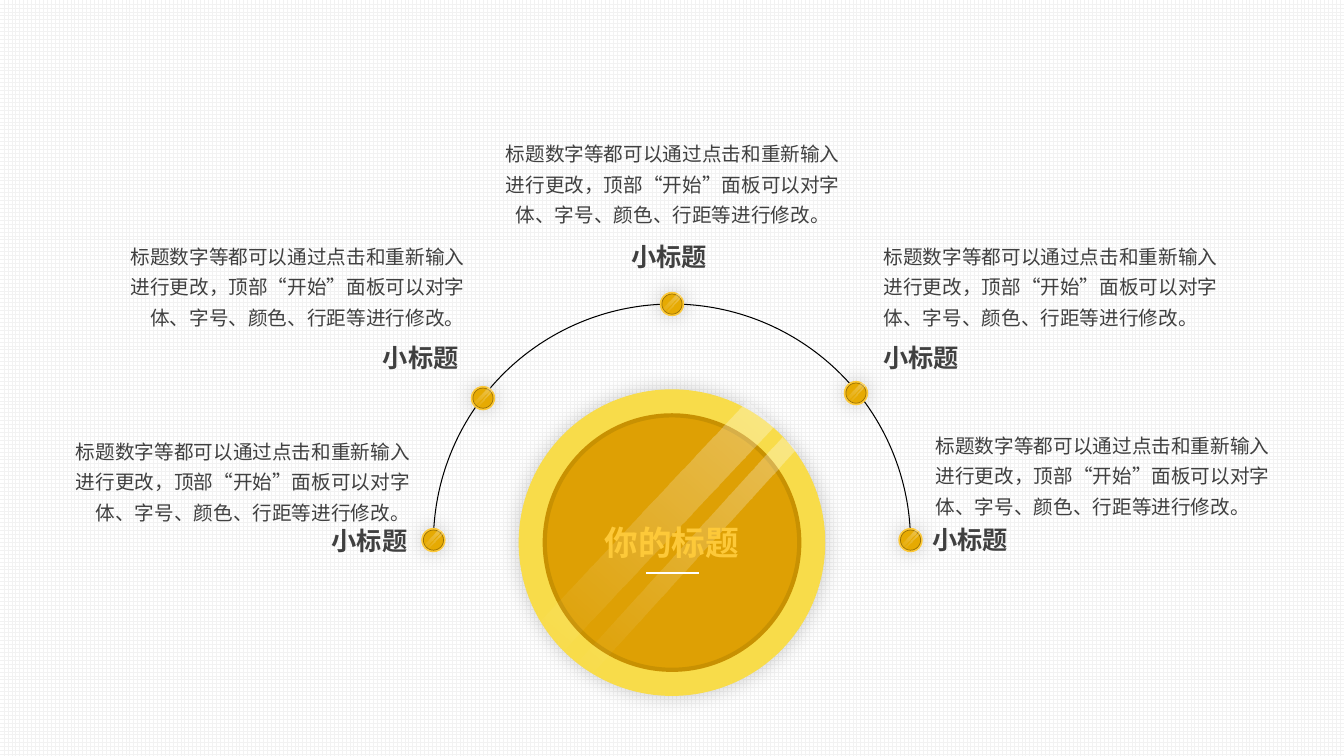
import pptx
import pptx.util
import pptx.dml.color
import pptx.enum.dml
import pptx.enum.shapes
import pptx.enum.text
import pptx.oxml
import pptx.oxml.ns

SHAPE = pptx.enum.shapes.MSO_SHAPE
ALIGN = pptx.enum.text.PP_ALIGN
ANCHOR = pptx.enum.text.MSO_ANCHOR
NS = pptx.oxml.ns.nsdecls("a")

prs = pptx.Presentation()
prs.slide_width = pptx.util.Inches(13.33)
prs.slide_height = pptx.util.Inches(7.5)
col = prs.slide_width / 16
row = prs.slide_height / 9
s = prs.slides.add_slide(prs.slide_layouts[5])


def rgb(value):
    return pptx.dml.color.RGBColor.from_string(value)


def coin(cx, cy, d, rim_color, face_color, edge_color, edge_width):
    g = s.shapes.add_group_shape()
    discs = []
    for size, color in ((d, rim_color), (d * 0.83, face_color)):
        sp = g.shapes.add_shape(SHAPE.OVAL, int((cx - size / 2) * col), int((cy - size / 2) * row),
                                int(size * col), int(size * row))
        sp.shadow.inherit = False
        sp.fill.solid()
        sp.fill.fore_color.rgb = rgb(color)
        sp.line.fill.background()
        discs.append(sp)
    rim, face = discs
    face.line.color.rgb = rgb(edge_color)
    face.line.width = pptx.util.Pt(edge_width)
    effects = rim._element.spPr.find(pptx.oxml.ns.qn("a:effectLst"))
    effects.append(pptx.oxml.parse_xml(
        f'<a:outerShdw {NS} blurRad="{pptx.util.Pt(15)}" dist="0" dir="0" algn="ctr" rotWithShape="0">'
        '<a:srgbClr val="000000"><a:alpha val="20000"/></a:srgbClr></a:outerShdw>'))
    for dx, dy, w, h in ((0.04, 0.05, 0.08, 1.01), (-0.06, -0.05, 0.16, 1.02)):
        sp = g.shapes.add_shape(SHAPE.PARALLELOGRAM, int((cx + (dx - w / 2) * d) * col),
                                int((cy + (dy - h / 2) * d) * row), int(w * d * col), int(h * d * row))
        sp.adjustments[0] = 0.25
        sp.rotation = 41
        sp.shadow.inherit = False
        sp.line.fill.background()
        sp.fill.gradient()
        sp.fill.gradient_angle = 90
        for stop, position, alpha in zip(sp.fill.gradient_stops, (0, 1), (0, 33000)):
            stop.position = position
            stop.color.rgb = rgb("FFFFFF")
            clr = stop._gs.find(pptx.oxml.ns.qn("a:srgbClr"))
            clr.append(pptx.oxml.parse_xml(f'<a:alpha {NS} val="{alpha}"/>'))


bg = s.background.fill
bg.patterned()
bg.pattern = pptx.enum.dml.MSO_PATTERN.LARGE_GRID
bg.fore_color.rgb = rgb("F2F2F2")
bg.back_color.rgb = rgb("FFFFFF")

coin(8, 6.46, 3.65, "F8DC4A", "DEA004", "C89102", 3)

rule = s.shapes.add_connector(pptx.enum.shapes.MSO_CONNECTOR.STRAIGHT, int(7.69 * col), int(6.82 * row),
                              int(8.32 * col), int(6.82 * row))
rule.line.color.rgb = rgb("FFFFFF")
rule.line.width = pptx.util.Pt(1)
rule._element.spPr.append(pptx.oxml.parse_xml(f"<a:effectLst {NS}/>"))

arc = s.shapes.add_shape(SHAPE.ARC, int(5.16 * col), int(3.62 * row), int(5.68 * col), int(5.68 * row))
arc.adjustments[0] = 108.09
arc.adjustments[1] = 0
arc.shadow.inherit = False
arc.fill.background()
arc.line.color.rgb = rgb("000000")
arc.line.width = pptx.util.Pt(0.75)

for cx, cy in ((5.16, 6.43), (10.84, 6.43), (10.19, 4.68), (5.75, 4.74), (8, 3.62)):
    coin(cx, cy, 0.29, "FDC939", "E6AA02", "997102", 0.5)

BODY = "标题数字等都可以通过点击和重新输入进行更改，顶部“开始”面板可以对字体、字号、颜色、行距等进行修改。"
body_font = {"size": pptx.util.Pt(14), "name": "Arial", "bold": False}
label_font = {"size": pptx.util.Pt(18), "name": "Arial", "bold": True}
title_font = {"size": pptx.util.Pt(24), "name": "Arial", "bold": True}

title = s.shapes.title
title.left, title.top, title.width, title.height = int(7 * col), int(6.15 * row), int(2 * col), int(0.6 * row)
title._element.getparent().append(title._element)
texts = [(title, "你的标题", title_font, "FDC939", ALIGN.CENTER, 1, False, ANCHOR.MIDDLE)]

items = (
    ((5.88, 1.55), (7.4, 2.81), ALIGN.CENTER),
    ((10.4, 2.77), (10.4, 4.02), ALIGN.LEFT),
    ((1.39, 2.77), (4.44, 4.02), ALIGN.RIGHT),
    ((11.02, 5.02), (10.98, 6.18), ALIGN.LEFT),
    ((0.74, 5.09), (3.83, 6.2), ALIGN.RIGHT),
)
for body_at, label_at, align in items:
    for (x, y), (w, h), text, font, al, spacing, wrap in (
        (body_at, (4.26, 1.19), BODY, body_font, align, 1.3, True),
        (label_at, (1.15, 0.48), "小标题", label_font, ALIGN.LEFT, 1, False),
    ):
        box = s.shapes.add_textbox(int(x * col), int(y * row), int(w * col), int(h * row))
        texts.append((box, text, font, "404040", al, spacing, wrap, ANCHOR.TOP))

for box, text, font, color, align, spacing, wrap, anchor in texts:
    tf = box.text_frame
    tf.word_wrap = wrap
    tf.vertical_anchor = anchor
    p = tf.paragraphs[0]
    p.alignment = align
    p.line_spacing = spacing
    r = p.add_run()
    r.text = text
    r.font.color.rgb = rgb(color)
    for key, value in font.items():
        setattr(r.font, key, value)

prs.save("out.pptx")
